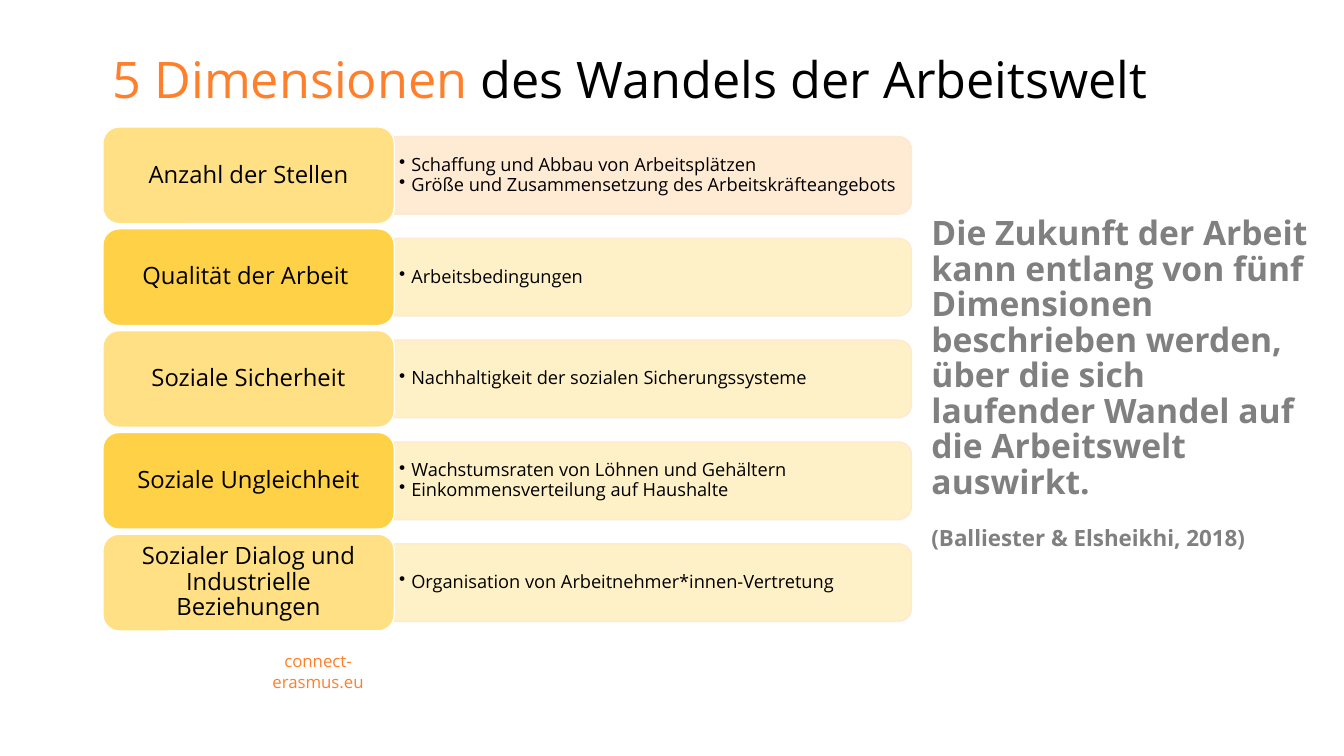
from dataclasses import dataclass

from lxml.etree import SubElement
from pptx import Presentation
from pptx.dml.color import RGBColor
from pptx.enum.shapes import MSO_SHAPE
from pptx.enum.text import MSO_ANCHOR, PP_ALIGN
from pptx.oxml.ns import qn
from pptx.util import Inches, Pt


@dataclass(frozen=True)
class Theme:
    font: str = "Open Sans"
    orange: str = "FF7F2A"
    black: str = "000000"
    grey: str = "808080"
    white: str = "FFFFFF"
    peach: str = "FFE8CF"
    cream: str = "FFF0C2"
    light_yellow: str = "FFE085"
    yellow: str = "FFD147"
    title_size: int = 36
    quote_size: int = 24
    label_size: int = 17
    source_size: int = 16
    bullet_size: int = 13
    footer_size: int = 12


DIMENSIONS = [
    ("Anzahl der Stellen",
     ["Schaffung und Abbau von Arbeitsplätzen",
      "Größe und Zusammensetzung des Arbeitskräfteangebots"]),
    ("Qualität der Arbeit ", ["Arbeitsbedingungen"]),
    ("Soziale Sicherheit", ["Nachhaltigkeit der sozialen Sicherungssysteme"]),
    ("Soziale Ungleichheit",
     ["Wachstumsraten von Löhnen und Gehältern",
      "Einkommensverteilung auf Haushalte"]),
    ("Sozialer Dialog und Industrielle Beziehungen",
     ["Organisation von Arbeitnehmer*innen-Vertretung"]),
]
QUOTE = ("Die Zukunft der Arbeit kann entlang von fünf Dimensionen beschrieben "
         "werden, über die sich laufender Wandel auf die Arbeitswelt auswirkt.")

ROW_TOP, ROW_PITCH = 1.26, 1.01
LABEL_LEFT, LABEL_W, LABEL_H = 1.02, 2.89, 0.96
PANEL_LEFT, PANEL_W, PANEL_H = 3.91, 5.13, 0.77
ALPHA = "90000"


class SlideBuilder:
    def __init__(self, slide, theme):
        self.slide = slide
        self.theme = theme

    def frame(self, tf, anchor, insets=(0.1, 0.05)):
        tf.word_wrap = True
        tf.vertical_anchor = anchor
        tf.margin_left = tf.margin_right = Inches(insets[0])
        tf.margin_top = tf.margin_bottom = Inches(insets[1])
        return tf

    def text_box(self, x, y, w, h, anchor, insets=(0.1, 0.05)):
        tb = self.slide.shapes.add_textbox(Inches(x), Inches(y), Inches(w), Inches(h))
        return self.frame(tb.text_frame, anchor, insets)

    def run(self, p, text, size, color, bold=False):
        r = p.add_run()
        r.text = text
        r.font.name = self.theme.font
        r.font.size = Pt(size)
        r.font.bold = bold
        r.font.color.rgb = RGBColor.from_string(color)

    def shape(self, kind, x, y, w, h, fill, line):
        sp = self.slide.shapes.add_shape(kind, Inches(x), Inches(y), Inches(w), Inches(h))
        sp.shadow.inherit = False
        sp.fill.solid()
        sp.fill.fore_color.rgb = RGBColor.from_string(fill)
        sp.line.color.rgb = RGBColor.from_string(line)
        sp.line.width = Pt(1)
        return sp

    def title(self, accent, rest):
        p = self.text_box(1.02, -0.16, 12.3, 1.29, MSO_ANCHOR.BOTTOM).paragraphs[0]
        p.line_spacing = 0.9
        self.run(p, accent, self.theme.title_size, self.theme.orange)
        self.run(p, rest, self.theme.title_size, self.theme.black)

    def quote(self, text, source):
        tf = self.text_box(9.14, 2.11, 3.96, 3.96, MSO_ANCHOR.TOP)
        p = tf.paragraphs[0]
        p.line_spacing = 0.88
        self.run(p, text, self.theme.quote_size, self.theme.grey, True)
        p = tf.add_paragraph()
        p.line_spacing = 0.88
        p.space_before = Pt(19)
        self.run(p, source, self.theme.source_size, self.theme.grey, True)

    def footer(self, text):
        p = self.text_box(2.28, 6.51, 1.75, 0.3, MSO_ANCHOR.MIDDLE).paragraphs[0]
        p.alignment = PP_ALIGN.CENTER
        self.run(p, text, self.theme.footer_size, self.theme.orange)

    def panel(self, center_y, fill):
        """Draw an upright shape turned by 90° so its rounded side faces right."""
        sp = self.shape(MSO_SHAPE.ROUND_2_SAME_RECTANGLE,
                        PANEL_LEFT + (PANEL_W - PANEL_H) / 2, center_y - PANEL_W / 2,
                        PANEL_H, PANEL_W, fill, self.theme.peach)
        sp.rotation = 90
        for color in sp._element.spPr.iter(qn("a:srgbClr")):
            SubElement(color, qn("a:alpha"), val=ALPHA)

    def bullets(self, center_y, items):
        tf = self.text_box(PANEL_LEFT, center_y - 0.345, 5.1, 0.69,
                           MSO_ANCHOR.MIDDLE, (0.05, 0.03))
        for i, item in enumerate(items):
            p = tf.add_paragraph() if i else tf.paragraphs[0]
            p.line_spacing = 0.9
            pPr = p._p.get_or_add_pPr()
            pPr.set("marL", str(Inches(0.12)))
            pPr.set("indent", str(-Inches(0.12)))
            SubElement(pPr, qn("a:buChar"), char="•")
            self.run(p, item, self.theme.bullet_size, self.theme.black)

    def label(self, y, text, fill):
        sp = self.shape(MSO_SHAPE.ROUNDED_RECTANGLE, LABEL_LEFT, y, LABEL_W, LABEL_H,
                        fill, self.theme.white)
        p = self.frame(sp.text_frame, MSO_ANCHOR.MIDDLE, (0.12, 0.08)).paragraphs[0]
        p.alignment = PP_ALIGN.CENTER
        p.line_spacing = 0.9
        self.run(p, text, self.theme.label_size, self.theme.black)

    def dimension(self, row, name, items):
        y = ROW_TOP + row * ROW_PITCH
        center_y = y + LABEL_H / 2
        self.panel(center_y, self.theme.cream if row else self.theme.peach)
        self.bullets(center_y, items)
        self.label(y, name, self.theme.yellow if row % 2 else self.theme.light_yellow)


def main():
    prs = Presentation()
    prs.slide_width, prs.slide_height = Inches(13.33), Inches(7.5)
    builder = SlideBuilder(prs.slides.add_slide(prs.slide_layouts[6]), Theme())
    builder.title("5 Dimensionen", " des Wandels der Arbeitswelt")
    builder.quote(QUOTE, "(Balliester & Elsheikhi, 2018)")
    builder.footer("connect-erasmus.eu")
    for row, (name, items) in enumerate(DIMENSIONS):
        builder.dimension(row, name, items)
    prs.save("out.pptx")


if __name__ == "__main__":
    main()
